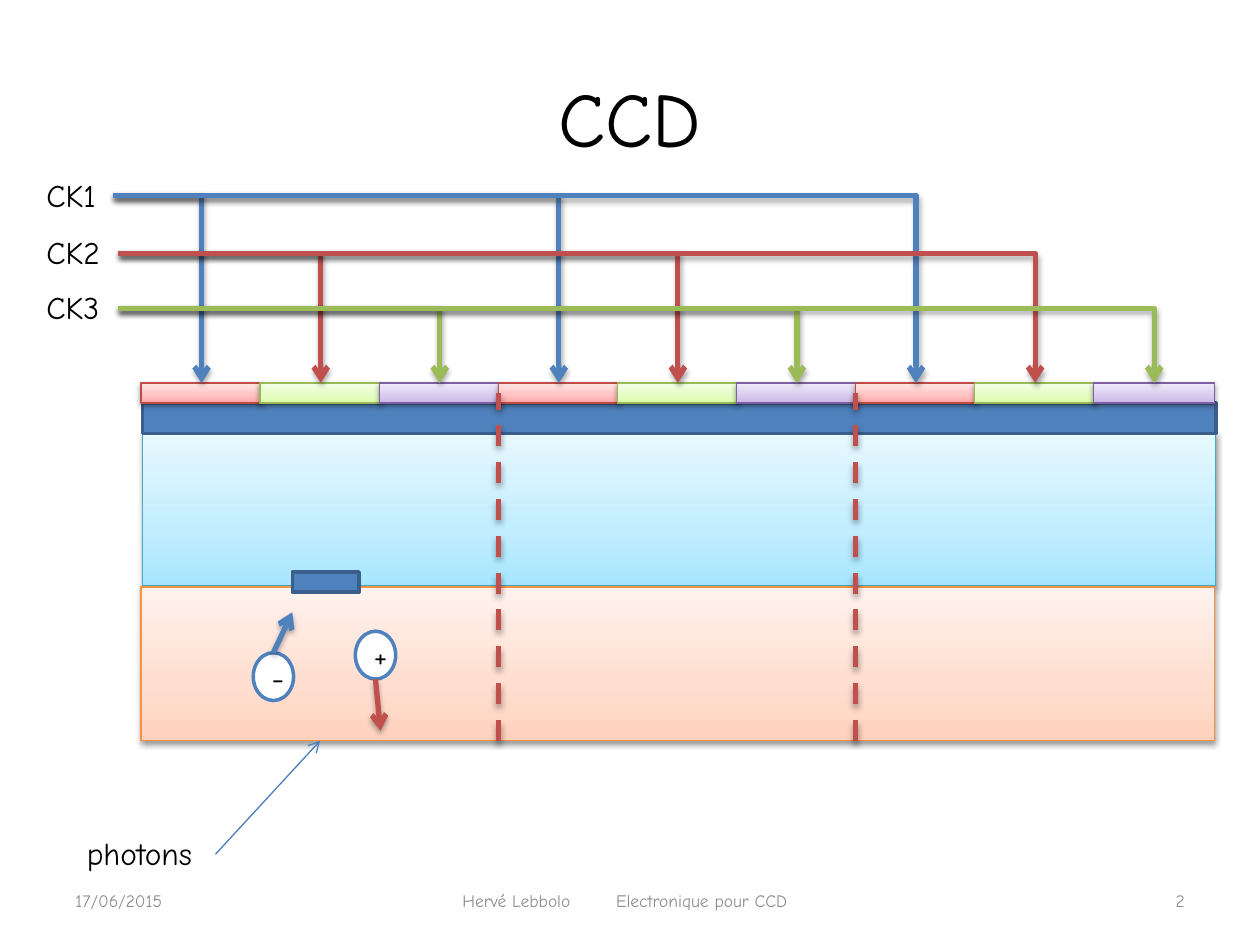
from dataclasses import dataclass

from lxml.etree import SubElement
from pptx import Presentation
from pptx.dml.color import RGBColor
from pptx.enum.dml import MSO_LINE_DASH_STYLE as Dash
from pptx.enum.shapes import MSO_CONNECTOR as Connector
from pptx.enum.shapes import MSO_SHAPE as Preset
from pptx.enum.text import MSO_ANCHOR as Anchor
from pptx.enum.text import PP_ALIGN as Align
from pptx.oxml.ns import qn
from pptx.util import Inches, Pt

FONT = "Comic Neue"
BLACK = RGBColor(0x00, 0x00, 0x00)
WHITE = RGBColor(0xFF, 0xFF, 0xFF)
GREY = RGBColor(0x8C, 0x8C, 0x8C)
BLUE = RGBColor(0x4F, 0x81, 0xBD)
DARK_BLUE = RGBColor(0x3A, 0x5F, 0x8C)
PHOTON_BLUE = RGBColor(0x4B, 0x7E, 0xBC)
RED = RGBColor(0xC0, 0x50, 0x4D)
GREEN = RGBColor(0x9B, 0xBB, 0x59)

# Gate electrodes: nine in a row, three per pixel
GATE_LEFT, GATE_TOP, GATE_WIDTH, GATE_HEIGHT = 1.12, 3.04, 0.96, 0.16
GATE_COUNT, PHASES = 9, 3
GATE_PITCH = (8.68 - GATE_LEFT) / (GATE_COUNT - 1)
BODY_WIDTH, LAYER_HEIGHT, BODY_BOTTOM = 8.52, 1.22, 5.88


@dataclass(frozen=True)
class Gradient:
    """Colours from bottom to top, with the outline that goes with them."""
    bottom: RGBColor
    middle: RGBColor
    top: RGBColor
    line: RGBColor


@dataclass(frozen=True)
class Clock:
    label: str
    label_top: float
    start: float
    level: float
    color: RGBColor


def gradient(*codes: str) -> Gradient:
    return Gradient(*(RGBColor.from_string(code) for code in codes))


GATE_STYLES = [
    gradient("FFA6A5", "FFC0BF", "FFE7E7", "BF4C48"),
    gradient("DAFDA7", "E4FCC2", "F5FFE7", "98B955"),
    gradient("C9B5E8", "D8CBEE", "F0EAF9", "7D60A0"),
]
N_LAYER = gradient("A7E6FF", "C1EDFF", "E7F8FF", "46AAC5")
P_LAYER = gradient("FFD2BD", "FFDED0", "FFF2ED", "F69240")

CLOCKS = [
    Clock("CK1", 1.35, 0.90, 1.55, BLUE),
    Clock("CK2", 1.80, 0.94, 2.01, RED),
    Clock("CK3", 2.24, 0.94, 2.45, GREEN),
]


def add_color(parent, color: RGBColor):
    return SubElement(parent, qn("a:srgbClr"), val=str(color))


def add_shadow(effects, distance: int, opacity: int) -> None:
    shadow = SubElement(effects, qn("a:outerShdw"), blurRad="40000", dist=str(distance),
                        dir="5400000", rotWithShape="0")
    SubElement(add_color(shadow, BLACK), qn("a:alpha"), val=str(opacity * 1000))


def add_block(slide, left: float, top: float, width: float, height: float,
              fill: RGBColor | Gradient, line: RGBColor = DARK_BLUE, preset=Preset.RECTANGLE):
    shape = slide.shapes.add_shape(preset, Inches(left), Inches(top), Inches(width), Inches(height))
    shape.shadow.inherit = False
    if isinstance(fill, Gradient):
        shape.fill.gradient()
        shape.fill.gradient_angle = 90
        properties = shape.element.spPr
        stops = properties.find(qn("a:gradFill")).find(qn("a:gsLst"))
        stops.clear()
        for position, color in ((0, fill.bottom), (35, fill.middle), (100, fill.top)):
            add_color(SubElement(stops, qn("a:gs"), pos=str(position * 1000)), color)
        shape.line.color.rgb = fill.line
        shape.line.width = Pt(0.75)
        add_shadow(properties.find(qn("a:effectLst")), 20000, 38)
    else:
        shape.fill.solid()
        shape.fill.fore_color.rgb = fill
        shape.line.color.rgb = line
        shape.line.width = Pt(2)
    return shape


def add_line(slide, start: tuple[float, float], end: tuple[float, float], color: RGBColor,
             width: float = 3, bent: bool = False, arrow: bool = True, shadow: bool = True):
    kind = Connector.ELBOW if bent else Connector.STRAIGHT
    line = slide.shapes.add_connector(kind, *map(Inches, start + end))
    line.line.color.rgb = color
    line.line.width = Pt(width)
    properties = line.element.spPr
    if bent:  # one corner only: across, then down
        properties.find(qn("a:prstGeom")).set("prst", "bentConnector2")
    if arrow:
        SubElement(line.line._get_or_add_ln(), qn("a:tailEnd"), type="arrow")
    effects = SubElement(properties, qn("a:effectLst"))
    if shadow:
        add_shadow(effects, 23000, 35)
    return line


def write(shape, text: str, size: float, color: RGBColor = BLACK, align=Align.LEFT,
          anchor=Anchor.MIDDLE) -> None:
    frame = shape.text_frame
    frame.vertical_anchor = anchor
    frame.text = text
    paragraph = frame.paragraphs[0]
    paragraph.alignment = align
    for run in paragraph.runs:
        run.font.name = FONT
        run.font.size = Pt(size)
        run.font.color.rgb = color


def add_text(slide, left: float, top: float, width: float, height: float, text: str,
             size: float = 18, color: RGBColor = BLACK, align=Align.LEFT,
             anchor=Anchor.MIDDLE, wrap: bool = True):
    box = slide.shapes.add_textbox(Inches(left), Inches(top), Inches(width), Inches(height))
    box.text_frame.word_wrap = wrap
    write(box, text, size, color, align, anchor)
    return box


def add_label(slide, left: float, top: float, width: float, text: str) -> None:
    add_text(slide, left, top, width, 0.4, text, anchor=Anchor.TOP, wrap=False)


def add_charge(slide, left: float, top: float, sign: str):
    charge = add_block(slide, left, top, 0.32, 0.38, WHITE, BLUE, Preset.OVAL)
    write(charge, sign, 18, align=Align.CENTER)
    return charge


def add_footer(slide) -> None:
    add_text(slide, 0.5, 6.95, 1.51, 0.4, "17/06/2015", 10, GREY)
    credit = add_text(slide, 2.32, 6.95, 5.28, 0.4, "Hervé Lebbolo\tElectronique pour CCD", 10, GREY)
    credit.text_frame.margin_left = Inches(1.35)
    tabs = SubElement(credit.text_frame.paragraphs[0]._p.get_or_add_pPr(), qn("a:tabLst"))
    SubElement(tabs, qn("a:tab"), pos=str(Inches(1.22)), algn="l")
    add_text(slide, 8.31, 6.95, 1.19, 0.4, "2", 10, GREY, Align.RIGHT)


def main() -> None:
    presentation = Presentation()
    presentation.slide_width, presentation.slide_height = Inches(10), Inches(7.5)
    slide = presentation.slides.add_slide(presentation.slide_layouts[6])

    add_text(slide, 0.5, 0.3, 9, 1.25, "CCD", 44, align=Align.CENTER)
    add_footer(slide)

    # Sensor layers and gates
    add_block(slide, 1.13, 3.43, BODY_WIDTH, LAYER_HEIGHT, N_LAYER)
    add_block(slide, 1.13, 3.2, BODY_WIDTH, 0.24, BLUE)
    gate_lefts = [GATE_LEFT + index * GATE_PITCH for index in range(GATE_COUNT)]
    for index, left in enumerate(gate_lefts):
        add_block(slide, left, GATE_TOP, GATE_WIDTH, GATE_HEIGHT, GATE_STYLES[index % PHASES])
    add_block(slide, GATE_LEFT, 4.66, BODY_WIDTH, LAYER_HEIGHT, P_LAYER)

    # Pixel boundaries
    for left in gate_lefts[PHASES::PHASES]:
        boundary = add_line(slide, (left, BODY_BOTTOM), (left, 3.12), RED, arrow=False)
        boundary.line.dash_style = Dash.DASH

    # Clock lines, each driving every third gate
    for phase, clock in enumerate(CLOCKS):
        add_label(slide, 0.27, clock.label_top, 0.66, clock.label)
        for left in gate_lefts[phase::PHASES]:
            add_line(slide, (clock.start, clock.level), (left + GATE_WIDTH / 2, GATE_TOP),
                     clock.color, bent=True)

    # Charge well, photons and the charges they free
    add_block(slide, 2.32, 4.54, 0.53, 0.16, BLUE)
    add_label(slide, 0.59, 6.57, 1.12, "photons")
    add_line(slide, (1.71, 6.78), (2.54, BODY_BOTTOM), PHOTON_BLUE, 0.75, shadow=False)
    electron = add_charge(slide, 2.01, 5.18, "-")
    add_charge(slide, 2.82, 5.01, "+")
    add_line(slide, (2.98, 5.39), (3.02, 5.8), RED)
    add_line(slide, (2.17, 5.18), (2.32, 4.86), BLUE).begin_connect(electron, 0)

    presentation.save("out.pptx")


if __name__ == "__main__":
    main()
